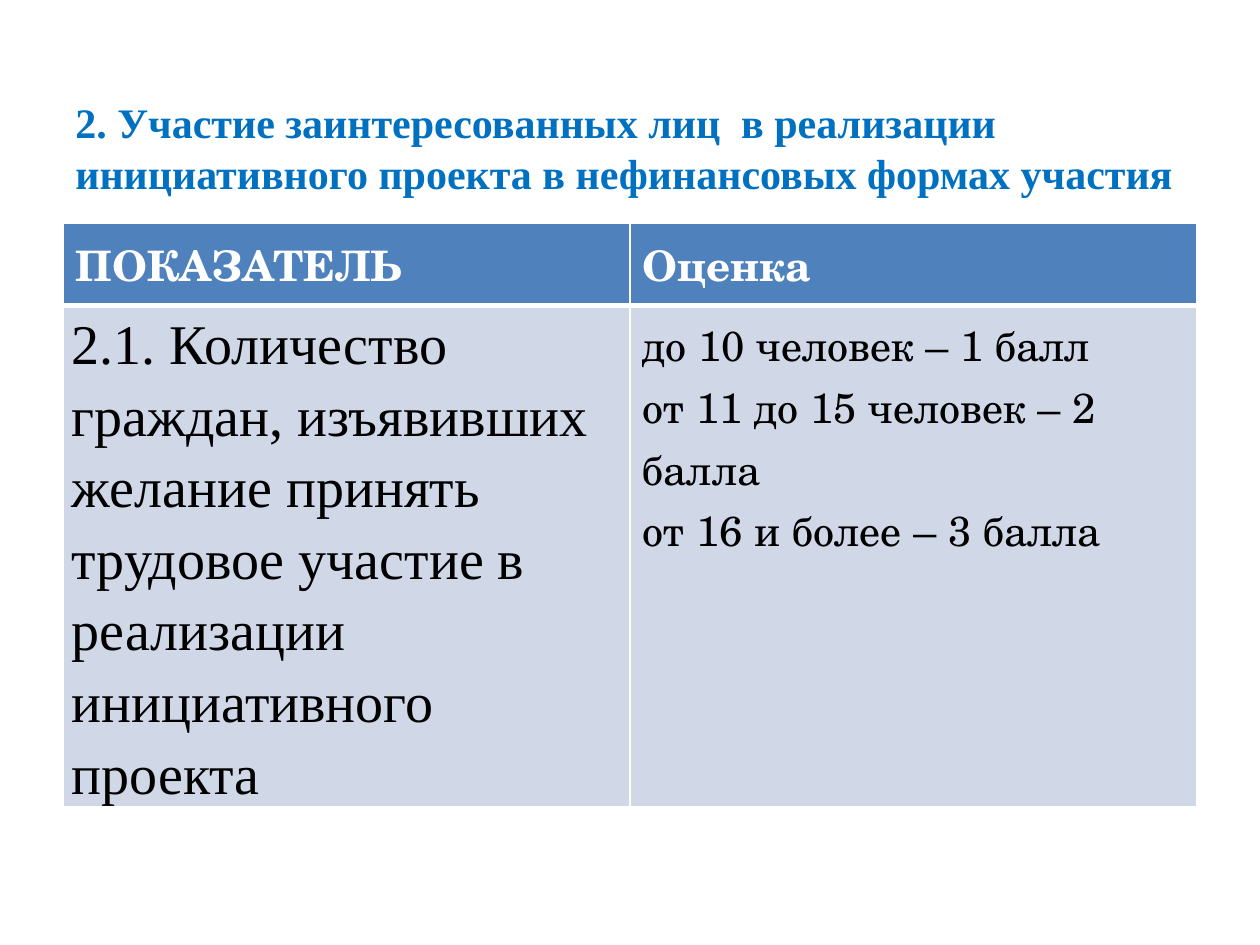
from dataclasses import dataclass

from lxml.etree import SubElement
from pptx import Presentation
from pptx.dml.color import RGBColor
from pptx.enum.text import MSO_ANCHOR
from pptx.oxml.ns import qn
from pptx.util import Inches, Pt


@dataclass(frozen=True)
class Theme:
    title: str = "0070C0"
    header: str = "4F81BD"
    body: str = "D0D8E8"
    ink: str = "000000"
    white: str = "FFFFFF"
    serif: str = "Times New Roman"
    school: str = "TeX Gyre Schola"
    normal: int = 24
    large: int = 32
    thin: int = 1
    thick: int = 3


def write(frame, text, *, font, size, color, bold=False, spacing=None, after=None):
    frame.word_wrap = True
    for index, line in enumerate(text.split("\n")):
        paragraph = frame.paragraphs[0] if index == 0 else frame.add_paragraph()
        if spacing:
            paragraph.line_spacing = spacing
        if after:
            paragraph.space_after = Pt(after)
        run = paragraph.add_run()
        run.text = line
        run.font.name = font
        run.font.size = Pt(size)
        run.font.bold = bold
        run.font.color.rgb = RGBColor.from_string(color)


class SlideBuilder:
    def __init__(self, slide, theme):
        self.slide = slide
        self.theme = theme

    def title(self, text, left, top, width, height):
        heading = self.slide.shapes.add_textbox(
            Inches(left), Inches(top), Inches(width), Inches(height)
        ).text_frame
        heading.vertical_anchor = MSO_ANCHOR.MIDDLE
        write(heading, text, font=self.theme.serif, size=self.theme.normal,
              color=self.theme.title, bold=True)

    def table(self, left, top, widths, heights):
        criteria = self.slide.shapes.add_table(
            len(heights), len(widths), Inches(left), Inches(top),
            Inches(sum(widths)), Inches(sum(heights))
        ).table
        for column, width in zip(criteria.columns, widths):
            column.width = Inches(width)
        for row, height in zip(criteria.rows, heights):
            row.height = Inches(height)
        return criteria

    def cell(self, cell, text, fill, top_line, bottom_line, insets=(0.1, 0.07), **style):
        cell.margin_left = cell.margin_right = Inches(insets[0])
        cell.margin_top = cell.margin_bottom = Inches(insets[1])
        cell.fill.solid()
        cell.fill.fore_color.rgb = RGBColor.from_string(fill)
        self.borders(cell, top_line, bottom_line)
        write(cell.text_frame, text, **style)

    def borders(self, cell, top_line, bottom_line):
        properties = cell._tc.get_or_add_tcPr()
        thin = self.theme.thin
        edges = {"L": thin, "R": thin, "T": top_line, "B": bottom_line}
        for index, (side, points) in enumerate(edges.items()):
            line = SubElement(properties, qn(f"a:ln{side}"), w=str(Pt(points)))
            color = SubElement(SubElement(line, qn("a:solidFill")), qn("a:srgbClr"))
            color.set("val", self.theme.white)
            properties.insert(index, line)


def main():
    theme = Theme()
    presentation = Presentation()
    presentation.slide_width = Inches(10)
    presentation.slide_height = Inches(7.5)
    builder = SlideBuilder(
        presentation.slides.add_slide(presentation.slide_layouts[6]), theme
    )

    criteria = builder.table(0.5, 1.77, (4.5, 4.5), (0.64, 3.97))
    for column, heading in enumerate(("ПОКАЗАТЕЛЬ", "Оценка")):
        builder.cell(criteria.cell(0, column), heading, theme.header,
                     theme.thin, theme.thick, font=theme.school,
                     size=theme.normal, color=theme.white, bold=True)
    builder.cell(
        criteria.cell(1, 0),
        "2.1. Количество граждан, изъявивших желание принять трудовое участие "
        "в реализации инициативного проекта",
        theme.body, theme.thick, theme.thin, insets=(0.07, 0),
        font=theme.serif, size=theme.large, color=theme.ink, spacing=1.15, after=10,
    )
    builder.cell(
        criteria.cell(1, 1),
        "до 10 человек – 1 балл\nот 11 до 15 человек – 2 балла\n"
        "от 16 и более – 3 балла",
        theme.body, theme.thick, theme.thin,
        font=theme.school, size=theme.normal, color=theme.ink,
    )
    builder.title(
        "2. Участие заинтересованных лиц  в реализации инициативного проекта "
        "в нефинансовых формах участия",
        0.5, 0.67, 9, 1,
    )
    presentation.save("out.pptx")


if __name__ == "__main__":
    main()
